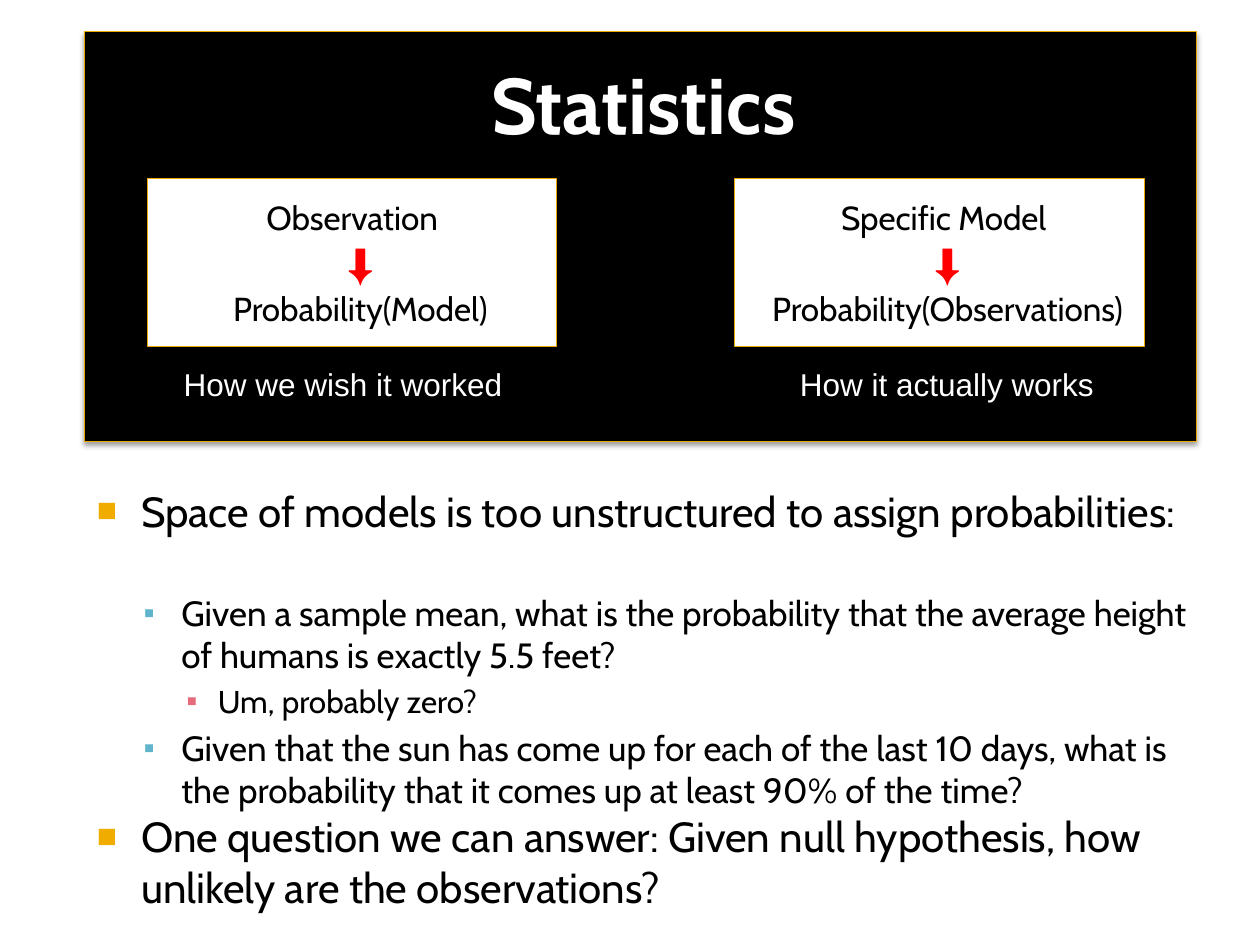
from dataclasses import dataclass

from lxml import etree
from pptx import Presentation
from pptx.dml.color import RGBColor
from pptx.enum import shapes, text
from pptx.oxml import ns
from pptx.util import Inches, Pt


@dataclass(frozen=True)
class Theme:
    heading_font: str = "Cabin"
    caption_font: str = "Arial"
    black: str = "000000"
    white: str = "FFFFFF"
    red: str = "FF0000"
    border: str = "EBA900"
    title_size: int = 45
    caption_size: int = 18
    box_size: int = 19
    arrow_size: int = 24
    level_sizes: tuple = (24, 20, 18)
    level_indents: tuple = ((0.48, -0.35), (0.8, -0.3), (1.09, -0.25))
    level_bullets: tuple = (("■", "F0AD00", 80), ("▪", "60B5CC", 90), ("▪", "E66C7D", 100))


def add_xml(parent, tag, **attributes):
    return etree.SubElement(parent, ns.qn(tag), attributes)


class SlideBuilder:
    def __init__(self, slide, theme):
        self.slide = slide
        self.theme = theme

    def place(self, shape, left, top, width, height):
        shape.left, shape.top = Inches(left), Inches(top)
        shape.width, shape.height = Inches(width), Inches(height)

    def style(self, paragraph, size, color, font, bold=False):
        paragraph.font.size = Pt(size)
        paragraph.font.name = font
        paragraph.font.bold = bold
        paragraph.font.color.rgb = RGBColor.from_string(color)

    def indent(self, paragraph, left, first=0):
        properties = paragraph._p.get_or_add_pPr()
        properties.set("marL", str(Inches(left)))
        properties.set("indent", str(Inches(first)))
        return properties

    def title(self, wording):
        heading = self.slide.shapes.title
        self.place(heading, 0.58, 0.13, 9, 1.37)
        frame = heading.text_frame
        frame.text = wording
        frame.auto_size = text.MSO_AUTO_SIZE.NONE
        frame.vertical_anchor = text.MSO_ANCHOR.MIDDLE
        frame.margin_right = Inches(0.05)
        paragraph = frame.paragraphs[0]
        paragraph.alignment = text.PP_ALIGN.CENTER
        self.style(paragraph, self.theme.title_size, self.theme.white, self.theme.heading_font, True)
        self.slide.shapes._spTree.append(heading._element)

    def bullets(self, points):
        body = self.slide.placeholders[1]
        self.place(body, 0.58, 3.75, 9, 1.75)
        frame = body.text_frame
        frame.auto_size = text.MSO_AUTO_SIZE.NONE
        frame.margin_left, frame.margin_top = Inches(0.06), Inches(0.1)
        for index, (level, wording, gap) in enumerate(points):
            paragraph = frame.add_paragraph() if index else frame.paragraphs[0]
            paragraph.text = wording
            paragraph.level = level
            size = self.theme.level_sizes[level]
            self.style(paragraph, size, self.theme.black, self.theme.heading_font)
            paragraph.space_before = Pt(0.2 * size if level else 0)
            paragraph.space_after = Pt(gap)
            properties = self.indent(paragraph, *self.theme.level_indents[level])
            mark, color, percent = self.theme.level_bullets[level]
            fonts = properties.find(ns.qn("a:defRPr"))
            add_xml(add_xml(properties, "a:buClr"), "a:srgbClr", val=color)
            add_xml(properties, "a:buSzPct", val=str(percent * 1000))
            add_xml(properties, "a:buFont", typeface=self.theme.caption_font)
            add_xml(properties, "a:buChar", char=mark)
            if fonts is not None:
                properties.append(fonts)

    def panel(self, left, top, width, height, fill):
        panel = self.slide.shapes.add_shape(
            shapes.MSO_SHAPE.RECTANGLE, Inches(left), Inches(top), Inches(width), Inches(height))
        panel.fill.solid()
        panel.fill.fore_color.rgb = RGBColor.from_string(fill)
        panel.line.color.rgb = RGBColor.from_string(self.theme.border)
        panel.line.width = Pt(0.5)
        panel.shadow.inherit = False
        effects = panel._element.spPr.find(ns.qn("a:effectLst"))
        shadow = add_xml(effects, "a:outerShdw", blurRad=str(Pt(3.1)), dist=str(Pt(2)),
                         dir="5400000", rotWithShape="0")
        add_xml(add_xml(shadow, "a:srgbClr", val=self.theme.black), "a:alpha", val="38000")
        return panel

    def inference_box(self, left, given, inferred, given_indent):
        theme = self.theme
        frame = self.panel(left, 1.42, 3.25, 1.33, theme.white).text_frame
        frame.vertical_anchor = text.MSO_ANCHOR.MIDDLE
        lines = (
            (given, theme.box_size, theme.black, theme.heading_font, given_indent),
            ("⬇", theme.arrow_size, theme.red, theme.caption_font, 0.13),
            (inferred, theme.box_size, theme.black, theme.heading_font, 0.13),
        )
        for index, (wording, size, color, font, left_indent) in enumerate(lines):
            paragraph = frame.add_paragraph() if index else frame.paragraphs[0]
            paragraph.text = wording
            paragraph.alignment = text.PP_ALIGN.CENTER
            self.style(paragraph, size, color, font)
            self.indent(paragraph, left_indent)

    def caption(self, left, width, wording):
        frame = self.slide.shapes.add_textbox(
            Inches(left), Inches(2.85), Inches(width), Inches(0.4)).text_frame
        frame.text = wording
        frame.word_wrap = False
        frame.auto_size = text.MSO_AUTO_SIZE.SHAPE_TO_FIT_TEXT
        self.style(frame.paragraphs[0], self.theme.caption_size, self.theme.white,
                   self.theme.caption_font)


def main():
    deck = Presentation()
    deck.slide_width, deck.slide_height = Inches(10), Inches(7.5)
    theme = Theme()
    builder = SlideBuilder(deck.slides.add_slide(deck.slide_layouts[1]), theme)
    builder.bullets((
        (0, "Space of models is too unstructured to assign probabilities:", 28),
        (1, "Given a sample mean, what is the probability that the average height "
            "of humans is exactly 5.5 feet?", 0),
        (2, "Um, probably zero?", 0),
        (1, "Given that the sun has come up for each of the last 10 days, what is "
            "the probability that it comes up at least 90% of the time?", 0),
        (0, "One question we can answer: Given null hypothesis, how unlikely are "
            "the observations?", 0),
    ))
    builder.panel(0.67, 0.25, 8.83, 3.25, theme.black)
    builder.title("Statistics")
    builder.caption(1.36, 2.76, "How we wish it worked")
    builder.caption(6.25, 2.56, "How it actually works")
    builder.inference_box(1.17, "Observation", "Probability(Model)", 0)
    builder.inference_box(5.83, "Specific Model", "Probability(Observations)", 0.07)
    deck.save("out.pptx")


if __name__ == "__main__":
    main()
